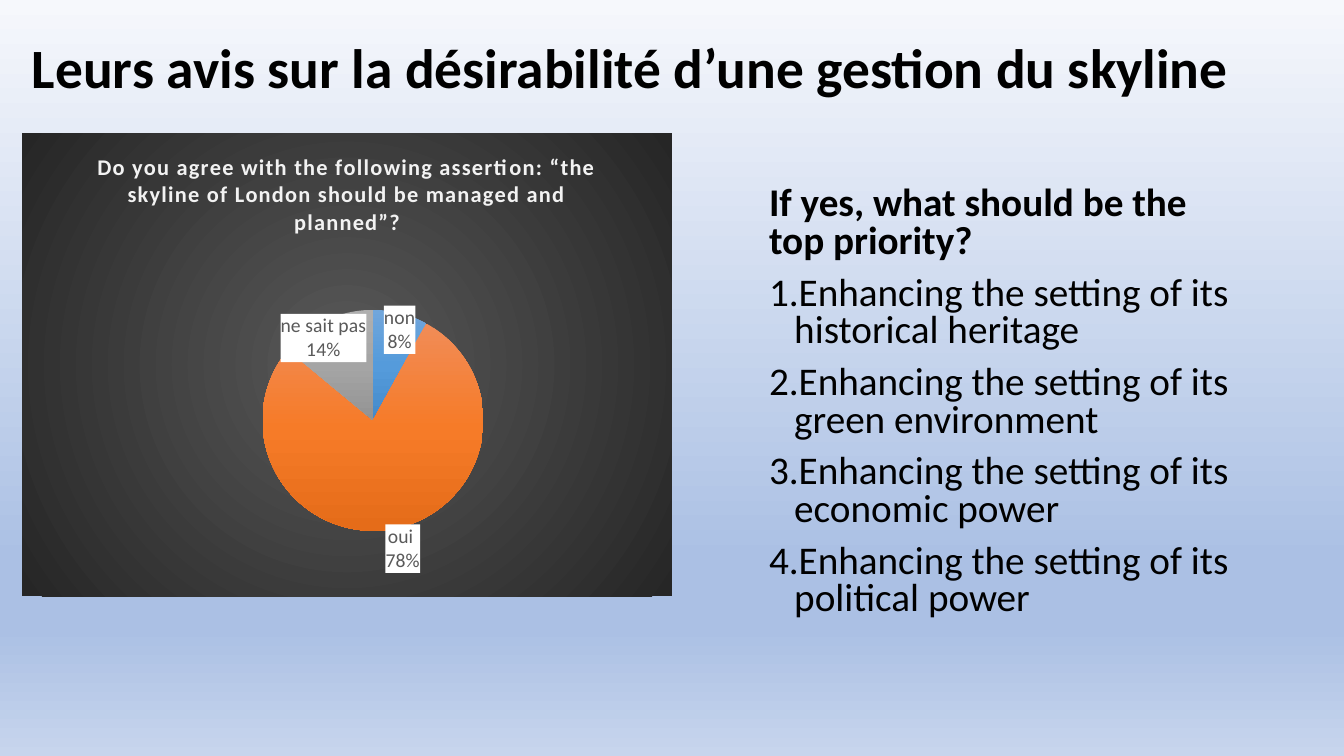
from dataclasses import dataclass

import lxml.etree
import pptx
import pptx.chart.data
import pptx.dml.color
import pptx.enum.chart
import pptx.enum.text
import pptx.oxml
import pptx.oxml.ns
import pptx.util

EMU_PER_PX = 9525
Stops = tuple[tuple[int, str], ...]
qn = pptx.oxml.ns.qn


@dataclass(frozen=True)
class Theme:
    font: str = "Calibri"
    ink: str = "000000"
    chart_title: str = "F2F2F2"
    label_ink: str = "595959"
    label_fill: str = "FFFFFF"
    title_pt: float = 39.6
    body_pt: float = 28
    chart_title_pt: float = 16
    label_pt: float = 14
    background: Stops = ((0, "F6F8FC"), (74, "ABC0E4"), (83, "ABC0E4"), (100, "C7D5ED"))
    chart_panel: Stops = ((0, "595959"), (100, "262626"))


@dataclass(frozen=True)
class Box:
    left: int
    top: int
    width: int
    height: int

    def emu(self) -> tuple[int, ...]:
        return tuple(px(n) for n in (self.left, self.top, self.width, self.height))


@dataclass(frozen=True)
class Answer:
    """A pie slice; the shift moves its label, as a share of the chart's size."""
    name: str
    percent: int
    stops: Stops
    shift: tuple[float, float]


THEME = Theme()
TITLE_BOX = Box(21, 15, 1216, 104)
PRIORITIES_BOX = Box(723, 173, 469, 432)
CHART_BOX = Box(21, 127, 619, 441)
NUMBER_INDENT = 24
PIE_LAYOUT = {"x": 0.37, "y": 0.38, "w": 0.34, "h": 0.48}

TITLE = "Leurs avis sur la désirabilité d’une gestion du skyline"
QUESTION = ("Do you agree with the following assertion: “the skyline of London "
            "should be managed and planned”?")
FOLLOW_UP = "If yes, what should be the top priority?"
PRIORITIES = ("historical heritage", "green environment", "economic power", "political power")
ANSWERS = (
    Answer("non", 8, ((0, "71A6DB"), (50, "559BDB"), (100, "448ACA")), (0.02, -0.08)),
    Answer("oui ", 78, ((0, "F18C57"), (50, "F67B28"), (100, "E56C19")), (0.03, 0.16)),
    Answer("ne sait pas", 14, ((0, "AFAFAF"), (50, "A5A5A5"), (100, "939393")), (-0.04, -0.07)),
)


def px(length: int) -> int:
    return length * EMU_PER_PX


def parse_xml(xml: str) -> lxml.etree._Element:
    """Parse a fragment whose root tag is followed by a space or a bracket."""
    end = min(i for i in (xml.find(" "), xml.find(">"), xml.find("/>")) if i > 0)
    return pptx.oxml.parse_xml(f"{xml[:end]} {pptx.oxml.ns.nsdecls('a', 'c')}{xml[end:]}")


def gradient(stops: Stops, radial: bool = False) -> str:
    marks = "".join(f'<a:gs pos="{pos * 1000}"><a:srgbClr val="{color}"/></a:gs>'
                    for pos, color in stops)
    course = ('<a:path path="circle"><a:fillToRect l="50000" t="50000" r="50000" b="50000"/>'
              '</a:path>' if radial else '<a:lin ang="5400000" scaled="0"/>')
    return f'<a:gradFill rotWithShape="1"><a:gsLst>{marks}</a:gsLst>{course}</a:gradFill>'


def replace_solid(root: lxml.etree._Element, stops: Stops) -> None:
    """Turn the first solid fill under root into a gradient."""
    solid = next(root.iter(qn("a:solidFill")))
    solid.getparent().replace(solid, parse_xml(gradient(stops)))


def style(font: pptx.text.text.Font, size: float, color: str, bold: bool = False) -> None:
    font.name = THEME.font
    font.size = pptx.util.Pt(size)
    font.bold = bold
    font.color.rgb = pptx.dml.color.RGBColor.from_string(color)


def add_text(slide: pptx.slide.Slide, box: Box, lines: list[str]) -> pptx.text.text.TextFrame:
    frame = slide.shapes.add_textbox(*box.emu()).text_frame
    frame.word_wrap = True
    frame.text = "\n".join(lines)
    return frame


def add_title(slide: pptx.slide.Slide) -> None:
    frame = add_text(slide, TITLE_BOX, [TITLE])
    frame.vertical_anchor = pptx.enum.text.MSO_ANCHOR.MIDDLE
    heading = frame.paragraphs[0]
    heading.line_spacing = 0.9
    style(heading.runs[0].font, THEME.title_pt, THEME.ink, bold=True)


def add_priorities(slide: pptx.slide.Slide) -> None:
    lines = [FOLLOW_UP] + [f"Enhancing the setting of its {aim}" for aim in PRIORITIES]
    frame = add_text(slide, PRIORITIES_BOX, lines)
    for rank, line in enumerate(frame.paragraphs):
        line.line_spacing = 0.8
        line.space_before = pptx.util.Pt(10)
        style(line.runs[0].font, THEME.body_pt, THEME.ink, bold=rank == 0)
        if rank:
            properties = line._p.get_or_add_pPr()
            properties.set("marL", str(px(NUMBER_INDENT)))
            properties.set("indent", str(-px(NUMBER_INDENT)))
            properties.append(parse_xml('<a:buAutoNum type="arabicPeriod"/>'))


def manual_layout(places: dict[str, float], inner: bool = False) -> str:
    target = '<c:layoutTarget val="inner"/>' if inner else ""
    modes = '<c:xMode val="edge"/><c:yMode val="edge"/>' if inner else ""
    values = "".join(f'<c:{key} val="{value}"/>' for key, value in places.items())
    return f"<c:layout><c:manualLayout>{target}{modes}{values}</c:manualLayout></c:layout>"


def slice_labels() -> str:
    look = (f'<c:numFmt formatCode="0%" sourceLinked="0"/><c:spPr><a:solidFill>'
            f'<a:srgbClr val="{THEME.label_fill}"/></a:solidFill><a:ln><a:noFill/></a:ln></c:spPr>'
            f'<c:txPr><a:bodyPr/><a:p><a:pPr><a:defRPr sz="{int(THEME.label_pt * 100)}" b="0">'
            f'<a:solidFill><a:srgbClr val="{THEME.label_ink}"/></a:solidFill>'
            f'<a:latin typeface="{THEME.font}"/></a:defRPr></a:pPr>'
            '<a:endParaRPr/></a:p></c:txPr><c:dLblPos val="ctr"/>')
    shown = "".join(f'<c:show{part} val="{int(part in ("CatName", "Percent"))}"/>' for part in
                    ("LegendKey", "Val", "CatName", "SerName", "Percent", "BubbleSize"))
    look += shown + "<c:separator>\n</c:separator>"
    labels = "".join(
        f'<c:dLbl><c:idx val="{i}"/>{manual_layout(dict(zip("xy", answer.shift)))}{look}</c:dLbl>'
        for i, answer in enumerate(ANSWERS))
    return f'<c:dLbls>{labels}{look}<c:showLeaderLines val="0"/></c:dLbls>'


def add_opinion_pie(slide: pptx.slide.Slide) -> None:
    data = pptx.chart.data.CategoryChartData()
    data.categories = [answer.name for answer in ANSWERS]
    data.add_series("Series 1", [answer.percent for answer in ANSWERS])
    chart = slide.shapes.add_chart(
        pptx.enum.chart.XL_CHART_TYPE.PIE, *CHART_BOX.emu(), data).chart
    chart.has_legend = False
    style(chart.font, 10, THEME.ink)
    chart.plots[0].vary_by_categories = True

    question = chart.chart_title.text_frame
    question.text = QUESTION
    style(question.paragraphs[0].runs[0].font, THEME.chart_title_pt, THEME.chart_title, bold=True)
    next(chart.element.iter(qn("a:rPr"))).set("spc", "100")
    chart.chart_title.include_in_layout = False

    for i in range(len(ANSWERS)):
        look = chart.plots[0].series[0].points[i].format
        look.fill.solid()
        look.fill.fore_color.rgb = pptx.dml.color.RGBColor.from_string(THEME.ink)
        look.line.fill.background()
    for wedge, answer in zip(chart.element.iter(qn("c:dPt")), ANSWERS):
        replace_solid(wedge, answer.stops)

    next(chart.element.iter(qn("c:cat"))).addprevious(parse_xml(slice_labels()))
    plot_area = next(chart.element.iter(qn("c:plotArea")))
    for layout in plot_area.findall(qn("c:layout")):
        plot_area.remove(layout)
    plot_area.insert(0, parse_xml(manual_layout(PIE_LAYOUT, inner=True)))
    panel = gradient(THEME.chart_panel, radial=True)
    chart.element.find(qn("c:chart")).addnext(
        parse_xml(f"<c:spPr>{panel}<a:ln><a:noFill/></a:ln></c:spPr>"))


def main() -> None:
    deck = pptx.Presentation()
    deck.slide_width, deck.slide_height = px(1280), px(720)
    slide = deck.slides.add_slide(deck.slide_layouts[6])
    slide.background.fill.solid()
    slide.background.fill.fore_color.rgb = pptx.dml.color.RGBColor.from_string(THEME.ink)
    replace_solid(slide.element, THEME.background)
    add_title(slide)
    add_priorities(slide)
    add_opinion_pie(slide)
    deck.save("out.pptx")


if __name__ == "__main__":
    main()
